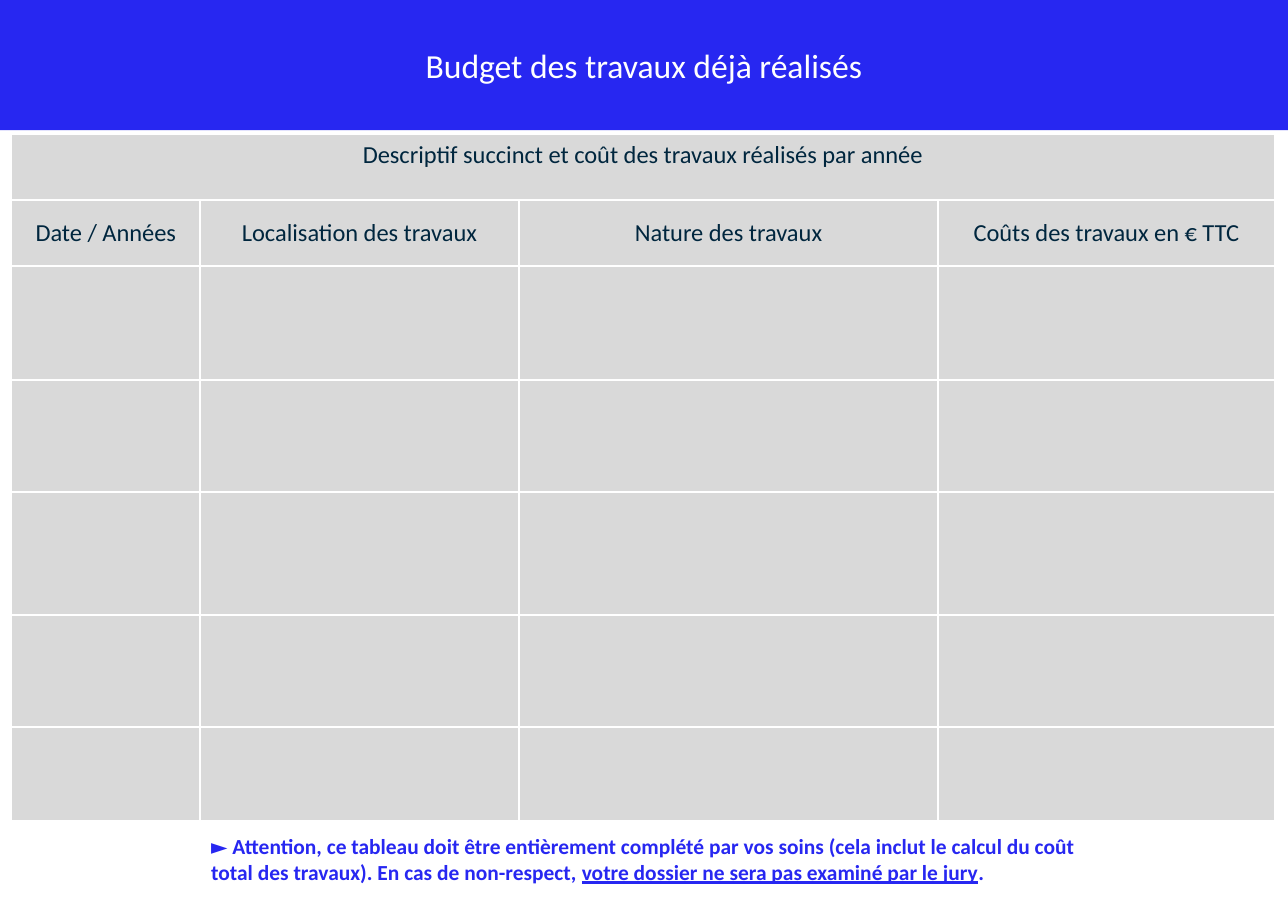
from dataclasses import dataclass
from lxml import etree
from pptx import Presentation
from pptx import util as u
from pptx.dml.color import RGBColor
from pptx.enum import shapes, text
from pptx.oxml import ns


@dataclass(frozen=True)
class Theme:
    font: str = "Calibri"
    blue: str = "2727F1"
    white: str = "FFFFFF"
    navy: str = "00263E"
    grey: str = "D9D9D9"
    title: int = 22
    head: int = 16
    note: int = 14
    rule: float = 1.5


class Page:
    def __init__(self, deck, theme):
        self.theme = theme
        self.slide = deck.slides.add_slide(deck.slide_layouts[6])

    def style(self, run, size, color, bold=False):
        run.font.name = self.theme.font
        run.font.size = u.Pt(size)
        run.font.bold = bold
        run.font.color.rgb = RGBColor.from_string(color)

    def paint(self, item, color):
        item.fill.solid()
        item.fill.fore_color.rgb = RGBColor.from_string(color)

    def label(self, item, words, size, color):
        para = item.text_frame.paragraphs[0]
        para.text = words
        para.alignment = text.PP_ALIGN.CENTER
        self.style(para.runs[0], size, color)

    def banner(self, words, box):
        bar = self.slide.shapes.add_shape(
            shapes.MSO_SHAPE.RECTANGLE, *map(u.Cm, box))
        bar.shadow.inherit = False
        bar.line.fill.background()
        self.paint(bar, self.theme.blue)
        bar.text_frame.vertical_anchor = text.MSO_ANCHOR.MIDDLE
        self.label(bar, words, self.theme.title, self.theme.white)

    def border(self, cell):
        props = cell._tc.get_or_add_tcPr()
        for i, side in enumerate(("lnL", "lnR", "lnT", "lnB")):
            line = etree.Element(ns.qn("a:" + side),
                                 w=str(u.Pt(self.theme.rule)))
            fill = etree.SubElement(line, ns.qn("a:solidFill"))
            etree.SubElement(fill, ns.qn("a:srgbClr"), val=self.theme.white)
            props.insert(i, line)

    def table(self, title, heads, left, top, cols, rows):
        box = map(u.Cm, (left, top, sum(cols), sum(rows)))
        grid = self.slide.shapes.add_table(len(rows), len(cols), *box).table
        for col, width in zip(grid.columns, cols):
            col.width = u.Cm(width)
        for row, height in zip(grid.rows, rows):
            row.height = u.Cm(height)
        for cell in grid.iter_cells():
            self.paint(cell, self.theme.grey)
            self.border(cell)

        # Title row across all columns, then column heads
        grid.cell(0, 0).merge(grid.cell(0, len(cols) - 1))
        self.label(grid.cell(0, 0), title, self.theme.head, self.theme.navy)
        for i, head in enumerate(heads):
            cell = grid.cell(1, i)
            cell.vertical_anchor = text.MSO_ANCHOR.MIDDLE
            self.label(cell, head, self.theme.head, self.theme.navy)

    def note(self, parts, box):
        frame = self.slide.shapes.add_textbox(*map(u.Cm, box)).text_frame
        frame.word_wrap = True
        for words, under in parts:
            run = frame.paragraphs[0].add_run()
            run.text = words
            self.style(run, self.theme.note, self.theme.blue, bold=True)
            run.font.underline = under


def main():
    deck = Presentation()
    deck.slide_width, deck.slide_height = u.Cm(29.7), u.Cm(21)
    page = Page(deck, Theme())

    # Works table
    page.table(
        "Descriptif succinct et coût des travaux réalisés par année",
        ("Date / Années", "Localisation des travaux",
         "Nature des travaux", "Coûts des travaux en € TTC"),
        0.26, 3.1,
        cols=(4.36, 7.34, 9.68, 7.75),
        rows=(1.52, 1.52, 2.62, 2.59, 2.82, 2.59, 2.16))

    # Title banner
    page.banner("Budget des travaux déjà réalisés", (0, 0, 29.7, 3))

    # Warning below the table
    page.note((
        ("► Attention, ce tableau doit être entièrement complété par vos "
         "soins (cela inclut le calcul du coût total des travaux). "
         "En cas de non-respect, ", False),
        ("votre dossier ne sera pas examiné par le jury", True),
        (".", False),
    ), (4.62, 19.08, 20.47, 1.45))

    deck.save("out.pptx")


if __name__ == "__main__":
    main()
